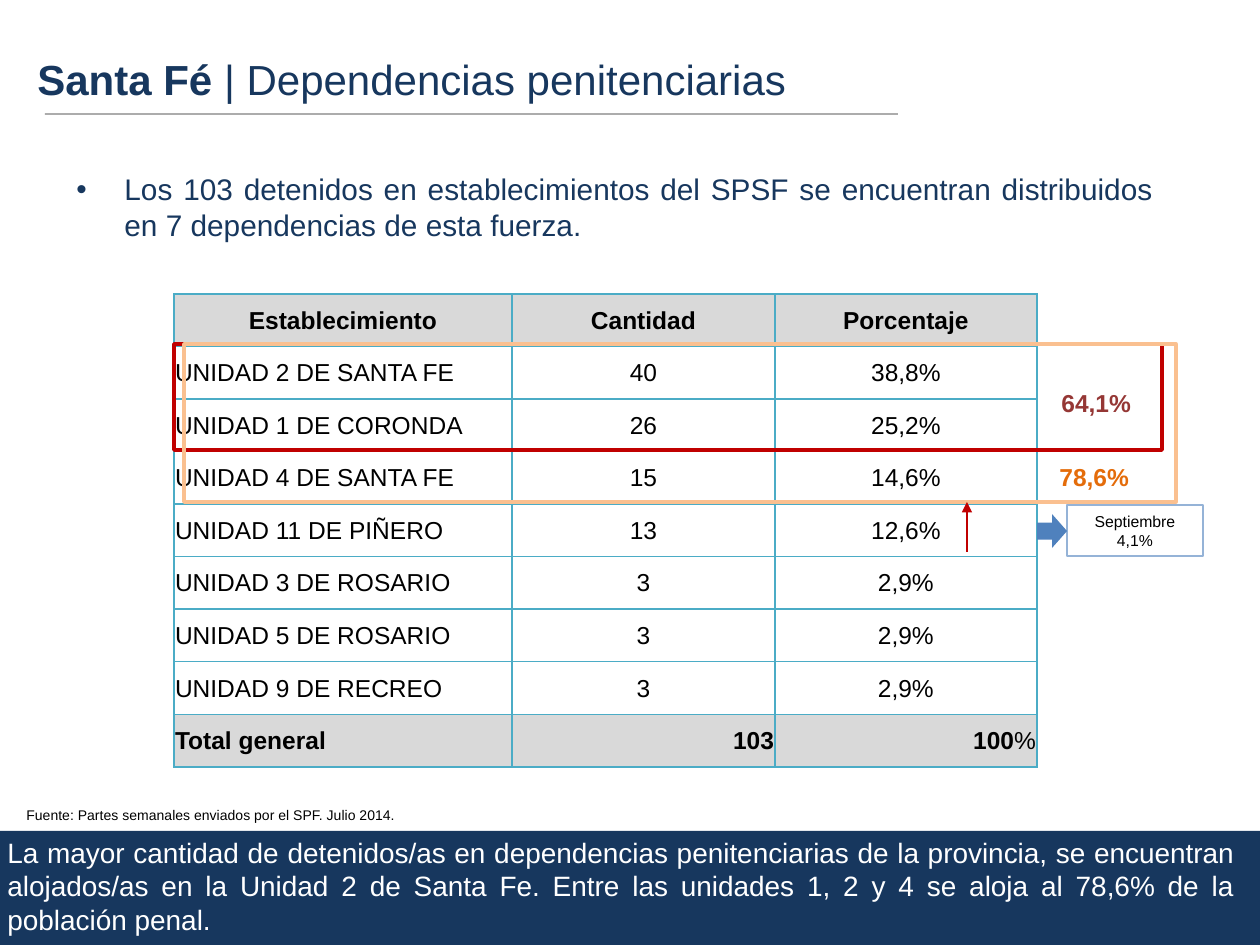
from lxml.etree import SubElement
from pptx import Presentation
from pptx.dml.color import RGBColor
from pptx.enum.shapes import MSO_CONNECTOR as Conn, MSO_SHAPE as Kind
from pptx.enum.text import MSO_ANCHOR as Anchor, PP_ALIGN as Align
from pptx.oxml.ns import qn
from pptx.util import Emu, Pt

SCALE = 914400 / 126
BLACK = RGBColor(0, 0, 0)
WHITE = RGBColor(255, 255, 255)
NAVY = RGBColor(0x17, 0x37, 0x5E)
GREY = RGBColor(0xD9, 0xD9, 0xD9)
TEAL = RGBColor(0x4B, 0xAC, 0xC6)
RED = RGBColor(0xC0, 0, 0)
PEACH = RGBColor(0xFA, 0xC0, 0x90)
WINE = RGBColor(0x95, 0x37, 0x35)
ORANGE = RGBColor(0xE4, 0x6C, 0x0A)
BLUE = RGBColor(0x4F, 0x81, 0xBD)
PALE = RGBColor(0x95, 0xB3, 0xD7)

HEAD = ("Establecimiento", "Cantidad", "Porcentaje")
UNITS = [
    ("UNIDAD 2 DE SANTA FE", "40", "38,8%"),
    ("UNIDAD 1 DE CORONDA", "26", "25,2%"),
    ("UNIDAD 4 DE SANTA FE", "15", "14,6%"),
    ("UNIDAD 11 DE PIÑERO", "13", "12,6%"),
    ("UNIDAD 3 DE ROSARIO", "3", "2,9%"),
    ("UNIDAD 5 DE ROSARIO", "3", "2,9%"),
    ("UNIDAD 9 DE RECREO", "3", "2,9%"),
]
TOTAL = ("Total general", "103", "100")
WIDTHS = (338, 263, 262)


def px(num):
    return Emu(round(num * SCALE))


def style(font, size, color, bold=False):
    font.name = "Arial"
    font.size = Pt(size)
    font.bold = bold
    font.color.rgb = color


def write(frame, text, size, color, bold=False, align=Align.LEFT):
    para = frame.paragraphs[0]
    para.add_run().text = text
    para.alignment = align
    style(para.font, size, color, bold)
    return para


def add_text(slide, box, text, size, color, bold=False, align=Align.LEFT, wrap=True):
    frame = slide.shapes.add_textbox(*map(px, box)).text_frame
    frame.word_wrap = wrap
    return write(frame, text, size, color, bold, align)


def add_bullet(para, indent):
    props = para._p.get_or_add_pPr()
    props.set("marL", str(px(indent)))
    props.set("indent", str(-px(indent)))
    SubElement(props, qn("a:buFont"), typeface="Arial")
    SubElement(props, qn("a:buChar"), char="•")


def add_box(slide, kind, box, fill=None, line=None, width=1):
    shape = slide.shapes.add_shape(kind, *map(px, box))
    shape.shadow.inherit = False
    if fill is None:
        shape.fill.background()
    else:
        shape.fill.solid()
        shape.fill.fore_color.rgb = fill
    if line is None:
        shape.line.fill.background()
    else:
        shape.line.color.rgb = line
        shape.line.width = Pt(width)
    return shape


def add_line(slide, ends, color):
    conn = slide.shapes.add_connector(Conn.STRAIGHT, *map(px, ends))
    conn.line.color.rgb = color
    conn.line.width = Pt(0.75)
    SubElement(conn._element.spPr, qn("a:effectLst"))
    return conn.line._get_or_add_ln()


def add_edges(cell):
    props = cell._tc.get_or_add_tcPr()
    for side in ("lnL", "lnR", "lnT", "lnB"):
        edge = SubElement(props, qn(f"a:{side}"), w=str(Pt(1)))
        fill = SubElement(edge, qn("a:solidFill"))
        SubElement(fill, qn("a:srgbClr"), val=str(TEAL))


def fill_cell(cell, text, align, shade):
    add_edges(cell)
    cell.margin_left = cell.margin_right = cell.margin_top = px(1)
    cell.margin_bottom = 0
    cell.vertical_anchor = Anchor.MIDDLE
    if shade:
        cell.fill.solid()
        cell.fill.fore_color.rgb = GREY
    else:
        cell.fill.background()
    return write(cell.text_frame, text, 14, BLACK, shade, align)


def add_units(slide):
    rows = [HEAD, *UNITS, TOTAL]
    last = len(rows) - 1
    box = map(px, (174, 294, sum(WIDTHS), 473))
    table = slide.shapes.add_table(len(rows), len(HEAD), *box).table
    table.first_row = table.horz_banding = False
    for col, width in zip(table.columns, WIDTHS):
        col.width = px(width)
    for row, texts in enumerate(rows):
        for col, text in enumerate(texts):
            if col == 0 and row > 0:
                align = Align.LEFT
            else:
                align = Align.RIGHT if row == last else Align.CENTER
            para = fill_cell(table.cell(row, col), text, align, row in (0, last))
    sign = para.add_run()
    sign.text = "%"
    sign.font.bold = False


def main():
    deck = Presentation()
    deck.slide_width, deck.slide_height = px(1260), px(945)
    slide = deck.slides.add_slide(deck.slide_layouts[6])

    add_text(slide, (14, 800, 401, 30),
             "Fuente: Partes semanales enviados por el SPF. Julio 2014.",
             8, BLACK, wrap=False)
    title = add_text(slide, (25, 47, 932, 78), "Santa Fé", 24, NAVY)
    title.runs[0].font.bold = True
    title.add_run().text = " | Dependencias penitenciarias"
    rule = add_line(slide, (45, 114, 898, 114), BLACK)
    SubElement(rule.find(".//" + qn("a:srgbClr")), qn("a:alpha"), val="50000")

    intro = add_text(slide, (64, 165, 1102, 118),
                     "Los 103 detenidos en establecimientos del SPSF se encuentran "
                     "distribuidos en 7 dependencias de esta fuerza.",
                     17, NAVY, align=Align.JUSTIFY)
    add_bullet(intro, 48)

    add_box(slide, Kind.RECTANGLE, (0, 831, 1260, 116), NAVY)
    add_units(slide)
    add_box(slide, Kind.RECTANGLE, (174, 344, 988, 106), line=RED, width=2)
    add_box(slide, Kind.RECTANGLE, (184, 344, 992, 158), line=PEACH, width=2)
    add_text(slide, (1049, 382, 96, 43), "64,1%", 14, WINE, True, wrap=False)
    add_text(slide, (1047, 456, 96, 43), "78,6%", 14, ORANGE, True, wrap=False)
    add_text(slide, (-5, 829, 1252, 115),
             "La mayor cantidad de detenidos/as en dependencias penitenciarias de la "
             "provincia, se encuentran alojados/as en la Unidad 2 de Santa Fe. Entre "
             "las unidades 1, 2 y 4 se aloja al 78,6% de la población penal.",
             16, WHITE, align=Align.JUSTIFY)

    month = add_box(slide, Kind.RECTANGLE, (1067, 505, 136, 51), line=PALE, width=0.75)
    month.text_frame.word_wrap = True
    write(month.text_frame, "Septiembre 4,1%", 9, BLACK, align=Align.CENTER)
    arrow = add_box(slide, Kind.DOWN_ARROW, (1035, 516, 34, 30), BLUE)
    arrow.rotation = 270
    rise = add_line(slide, (967, 552, 967, 502), RED)
    SubElement(rise, qn("a:tailEnd"), type="triangle")

    deck.save("out.pptx")


if __name__ == "__main__":
    main()
